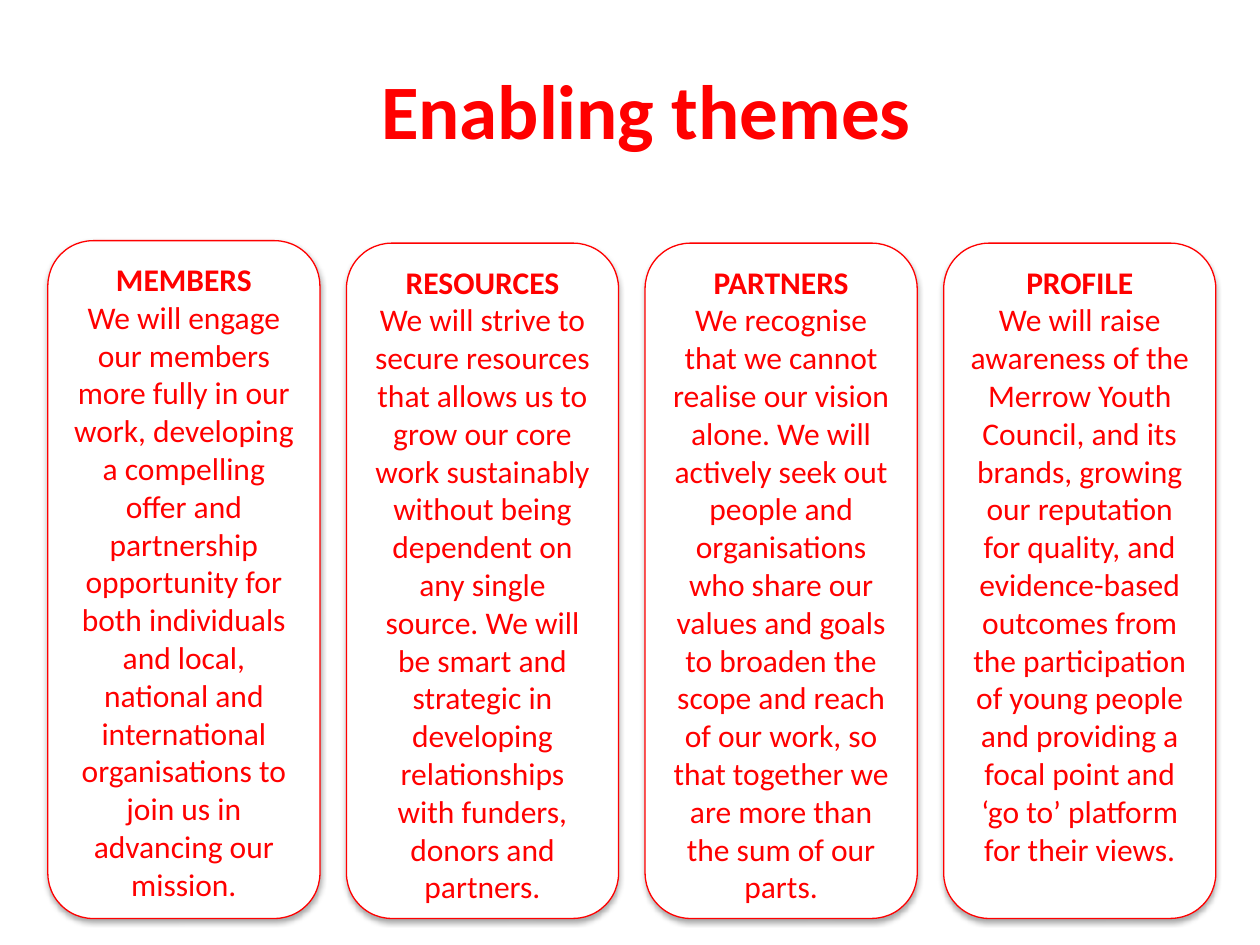
import pptx
import pptx.dml.color
import pptx.enum.shapes
import pptx.enum.text
import pptx.oxml
import pptx.oxml.ns
import pptx.util
from pptx.util import Inches

COLORS = {"red": "FF0000", "white": "FFFFFF", "shadow": "000000"}

THEMES = [
    ("MEMBERS", 1.91,
     "We will engage our members more fully in our work, developing a compelling "
     "offer and partnership opportunity for both individuals and local, national "
     "and international organisations to join us in advancing our mission."),
    ("RESOURCES", 1.93,
     "We will strive to secure resources that allows us to grow our core work "
     "sustainably without being dependent on any single source. We will be smart "
     "and strategic in developing relationships with funders, donors and partners."),
    ("PARTNERS", 1.93,
     "We recognise that we cannot realise our vision alone. We will actively seek "
     "out people and organisations who share our values and goals to broaden the "
     "scope and reach of our work, so that together we are more than the sum of "
     "our parts."),
    ("PROFILE", 1.93,
     "We will raise awareness of the Merrow Youth Council, and its brands, growing "
     "our reputation for quality, and evidence-based outcomes from the "
     "participation of young people and providing a focal point and ‘go to’ "
     "platform for their views."),
]

CARD_LEFT, CARD_STEP, CARD_WIDTH, CARD_BOTTOM = 0.38, 2.37, 2.16, 7.29


class SlideBuilder:
    font = "Calibri"

    def __init__(self, s):
        self.s = s

    def color(self, name):
        return pptx.dml.color.RGBColor.from_string(COLORS[name])

    def format(self, p, size, bold):
        p.alignment = pptx.enum.text.PP_ALIGN.CENTER
        for r in p.runs:
            r.font.name = self.font
            r.font.size = pptx.util.Pt(size)
            r.font.bold = bold
            r.font.color.rgb = self.color("red")

    def title(self, text, left, top, width, height):
        sp = self.s.shapes.title
        sp.left, sp.top = Inches(left), Inches(top)
        sp.width, sp.height = Inches(width), Inches(height)
        tf = sp.text_frame
        tf.text = text
        tf.vertical_anchor = pptx.enum.text.MSO_ANCHOR.MIDDLE
        self.format(tf.paragraphs[0], 44, True)

    def shadow(self, sp):
        sp.shadow.inherit = False
        effects = sp._element.spPr.find(pptx.oxml.ns.qn("a:effectLst"))
        effects.append(pptx.oxml.parse_xml(
            f'<a:outerShdw {pptx.oxml.ns.nsdecls("a")} '
            f'blurRad="{pptx.util.Pt(3.1)}" dist="{pptx.util.Pt(1.8)}" '
            f'dir="5400000" rotWithShape="0"><a:srgbClr val="{COLORS["shadow"]}">'
            '<a:alpha val="35000"/></a:srgbClr></a:outerShdw>'))

    def card(self, heading, body, left, top, width, height):
        sp = self.s.shapes.add_shape(
            pptx.enum.shapes.MSO_SHAPE.ROUNDED_RECTANGLE,
            Inches(left), Inches(top), Inches(width), Inches(height))
        sp.fill.solid()
        sp.fill.fore_color.rgb = self.color("white")
        sp.line.color.rgb = self.color("red")
        sp.line.width = pptx.util.Pt(0.75)
        self.shadow(sp)
        tf = sp.text_frame
        tf.word_wrap = True
        tf.vertical_anchor = pptx.enum.text.MSO_ANCHOR.TOP
        tf.text = heading
        self.format(tf.paragraphs[0], 18, True)
        p = tf.add_paragraph()
        p.text = body
        self.format(p, 18, False)


def main():
    prs = pptx.Presentation()
    prs.slide_width, prs.slide_height = Inches(10), Inches(7.5)
    builder = SlideBuilder(prs.slides.add_slide(prs.slide_layouts[5]))
    builder.title("Enabling themes", 0.63, 0.24, 9, 1.25)
    for i, (heading, top, body) in enumerate(THEMES):
        builder.card(heading, body, CARD_LEFT + i * CARD_STEP, top,
                     CARD_WIDTH, CARD_BOTTOM - top)
    prs.save("out.pptx")


if __name__ == "__main__":
    main()
